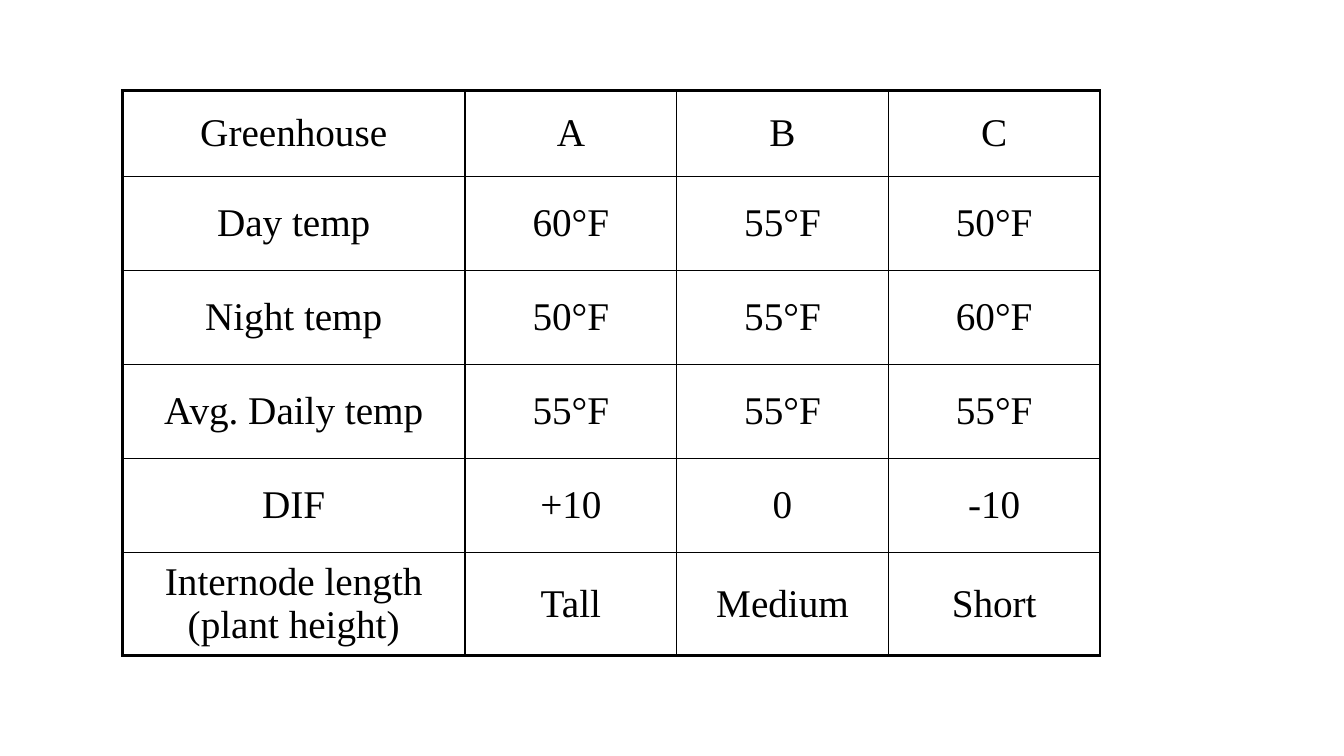
from lxml.etree import SubElement
from pptx import Presentation
from pptx.dml.color import RGBColor
from pptx.enum.text import MSO_ANCHOR, PP_ALIGN
from pptx.oxml.ns import qn
from pptx.util import Pt

ROWS = [
    ("Greenhouse", "A", "B", "C"),
    ("Day temp", "60°F", "55°F", "50°F"),
    ("Night temp", "50°F", "55°F", "60°F"),
    ("Avg. Daily temp", "55°F", "55°F", "55°F"),
    ("DIF", "+10", "0", "-10"),
    ("Internode length (plant height)", "Tall", "Medium", "Short"),
]
COLUMN_WIDTHS = [244.8, 151.2, 151.2, 151.2]
ROW_HEIGHTS = [61.2, 67.2, 67.2, 67.2, 67.2, 73.4]
LEFT, TOP = 87.4, 64.8
BLACK = RGBColor(0, 0, 0)
OUTER, INNER = Pt(2.25), Pt(1)


def write_text(cell, text, *, font="Times New Roman", size=28, color=BLACK):
    cell.vertical_anchor = MSO_ANCHOR.MIDDLE
    para = cell.text_frame.paragraphs[0]
    para.alignment = PP_ALIGN.CENTER
    span = para.add_run()
    span.text = text
    span.font.name = font
    span.font.size = Pt(size)
    span.font.color.rgb = color


def add_borders(cell, row, column):
    """Draw heavy lines on the table's outside edges and thin ones inside."""
    on_edge = {
        "a:lnL": column == 0,
        "a:lnR": column == len(COLUMN_WIDTHS) - 1,
        "a:lnT": row == 0,
        "a:lnB": row == len(ROWS) - 1,
    }
    properties = cell._tc.get_or_add_tcPr()
    for tag, outside in on_edge.items():
        line = SubElement(properties, qn(tag), w=str(OUTER if outside else INNER))
        fill = SubElement(line, qn("a:solidFill"))
        SubElement(fill, qn("a:srgbClr"), val=str(BLACK))


def main():
    deck = Presentation()
    deck.slide_width, deck.slide_height = Pt(960), Pt(540)
    page = deck.slides.add_slide(deck.slide_layouts[6])
    table = page.shapes.add_table(
        len(ROWS), len(COLUMN_WIDTHS), Pt(LEFT), Pt(TOP),
        Pt(sum(COLUMN_WIDTHS)), Pt(sum(ROW_HEIGHTS)),
    ).table
    table.first_row = table.horz_banding = False

    for column, width in zip(table.columns, COLUMN_WIDTHS):
        column.width = Pt(width)
    for row, height in zip(table.rows, ROW_HEIGHTS):
        row.height = Pt(height)

    for row, texts in enumerate(ROWS):
        for column, text in enumerate(texts):
            cell = table.cell(row, column)
            write_text(cell, text)
            add_borders(cell, row, column)
            cell.fill.background()

    deck.save("out.pptx")


if __name__ == "__main__":
    main()
